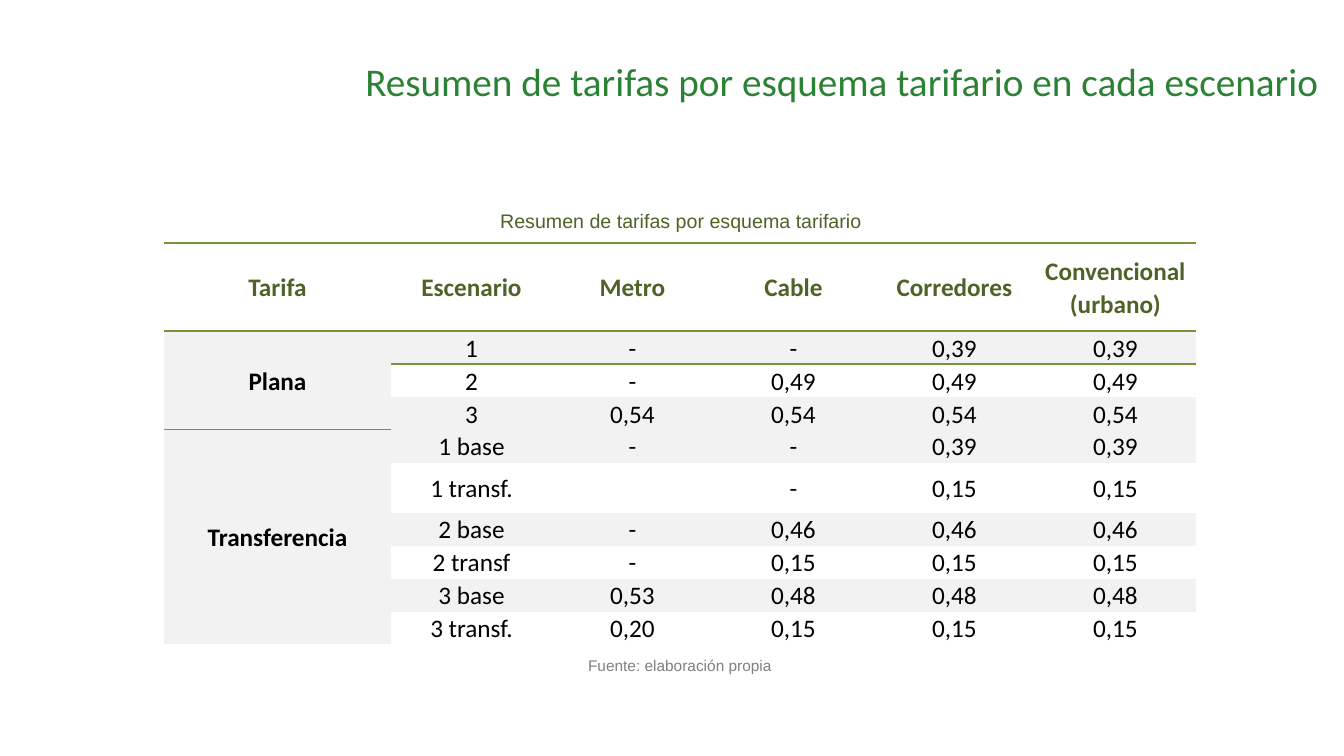
"""Build a slide summarising fares by fare scheme in each scenario."""
from dataclasses import dataclass

from lxml import etree
from pptx import Presentation
from pptx import util as u
from pptx.dml.color import RGBColor
from pptx.enum import text
from pptx.oxml.ns import qn

TITLE = "Resumen de tarifas por esquema tarifario en cada escenario"
CAPTION = "Resumen de tarifas por esquema tarifario"
SOURCE = "Fuente: elaboración propia"
HEADER = ["Tarifa", "Escenario", "Metro", "Cable", "Corredores", "Convencional (urbano)"]
FARES = {
    "Plana": [
        ("1", "-", "-", "0,39", "0,39"),
        ("2", "-", "0,49", "0,49", "0,49"),
        ("3", "0,54", "0,54", "0,54", "0,54"),
    ],
    "Transferencia": [
        ("1 base", "-", "-", "0,39", "0,39"),
        ("1 transf.", "", "-", "0,15", "0,15"),
        ("2 base", "-", "0,46", "0,46", "0,46"),
        ("2 transf", "-", "0,15", "0,15", "0,15"),
        ("3 base", "0,53", "0,48", "0,48", "0,48"),
        ("3 transf.", "0,20", "0,15", "0,15", "0,15"),
    ],
}

SLIDE = (1344, 756)
TITLE_BOX = (228, 31, 1100, 100)
CAPTION_BOX = (327, 204, 708, 34)
SOURCE_BOX = (503, 651, 354, 29)
TABLE_AT = (164, 243)
COL_W = [227] + [161] * 5
HEAD_H, ROW_H, TALL_H = 88, 32, 50
TALL_ROW = "1 transf."
CELL_INSET = 5


@dataclass(frozen=True)
class Theme:
    title: str = "2B8134"
    heading: str = "4F6228"
    rule: str = "77933C"
    band: str = "F2F2F2"
    ink: str = "000000"
    muted: str = "808080"
    body_font: str = "Calibri"
    note_font: str = "Arial"
    title_size: int = 28
    table_size: int = 18
    caption_size: int = 14
    source_size: int = 11
    rule_width: int = 1
    line_spacing: float = 1.07
    table_style: str = "{2D5ABB26-0587-4C30-8999-92F81FD0307C}"


T = Theme()


def px(n):
    """Turn slide pixels into EMU."""
    return u.Emu(round(n * 914400 / 100.8))


def write(tf, content, font, size, color, align, bold=False):
    """Put one formatted paragraph in a text frame."""
    tf.text = content
    tf.word_wrap = True
    p = tf.paragraphs[0]
    p.alignment = align
    for r in p.runs:
        r.font.name, r.font.size, r.font.bold = font, u.Pt(size), bold
        r.font.color.rgb = RGBColor.from_string(color)
    return p


def add_note(s, box, content, size, color):
    """Add a centred line of small text."""
    tf = s.shapes.add_textbox(*map(px, box)).text_frame
    write(tf, content, T.note_font, size, color, text.PP_ALIGN.CENTER)


def add_rules(cell, sides):
    """Draw the named borders of a cell."""
    tcPr = cell._tc.get_or_add_tcPr()
    for side in sides:
        ln = etree.SubElement(tcPr, qn(f"a:{side}"), w=str(u.Pt(T.rule_width)))
        fill = etree.SubElement(ln, qn("a:solidFill"))
        etree.SubElement(fill, qn("a:srgbClr"), val=T.rule)


def fill_cell(cell, content, color, bold, banded, sides):
    """Write and format one table cell."""
    p = write(cell.text_frame, content, T.body_font, T.table_size, color,
              text.PP_ALIGN.CENTER, bold)
    p.line_spacing = T.line_spacing
    cell.vertical_anchor = text.MSO_ANCHOR.MIDDLE
    cell.margin_left = cell.margin_right = px(CELL_INSET)
    cell.margin_top = cell.margin_bottom = 0
    add_rules(cell, sides)
    if banded:
        cell.fill.solid()
        cell.fill.fore_color.rgb = RGBColor.from_string(T.band)
    else:
        cell.fill.background()


def add_fares(s):
    """Add the fare table, one merged label per scheme."""
    rows = [(scheme if i == 0 else "", *fares)
            for scheme, group in FARES.items() for i, fares in enumerate(group)]
    heights = [HEAD_H] + [TALL_H if row[1] == TALL_ROW else ROW_H for row in rows]
    size = (sum(COL_W), sum(heights))
    table = s.shapes.add_table(len(heights), len(COL_W), *map(px, TABLE_AT + size)).table
    table.first_row = table.horz_banding = False
    table._tbl.tblPr.find(qn("a:tableStyleId")).text = T.table_style
    for column, w in zip(table.columns, COL_W):
        column.width = px(w)
    for row, h in zip(table.rows, heights):
        row.height = px(h)

    for c, label in enumerate(HEADER):
        fill_cell(table.cell(0, c), label, T.heading, True, False, ("lnT", "lnB"))
    for r, row in enumerate(rows, 1):
        banded = row[1].endswith("base") or row[1] in ("1", "3")
        for c, value in enumerate(row):
            fill_cell(table.cell(r, c), value, T.ink, c == 0, banded or c == 0,
                      ("lnT",) if r == 1 else ())
    top = 1
    for group in FARES.values():
        bottom = top + len(group) - 1
        table.cell(top, 0).merge(table.cell(bottom, 0))
        top = bottom + 1


def main():
    """Assemble and save the slide."""
    prs = Presentation()
    prs.slide_width, prs.slide_height = map(px, SLIDE)
    s = prs.slides.add_slide(prs.slide_layouts[5])
    title = s.shapes.title
    title.left, title.top, title.width, title.height = map(px, TITLE_BOX)
    tf = title.text_frame
    write(tf, TITLE, T.body_font, T.title_size, T.title, text.PP_ALIGN.RIGHT)
    tf.vertical_anchor = text.MSO_ANCHOR.MIDDLE
    tf.auto_size = text.MSO_AUTO_SIZE.NONE
    add_fares(s)
    add_note(s, SOURCE_BOX, SOURCE, T.source_size, T.muted)
    add_note(s, CAPTION_BOX, CAPTION, T.caption_size, T.heading)
    prs.save("out.pptx")


if __name__ == "__main__":
    main()
